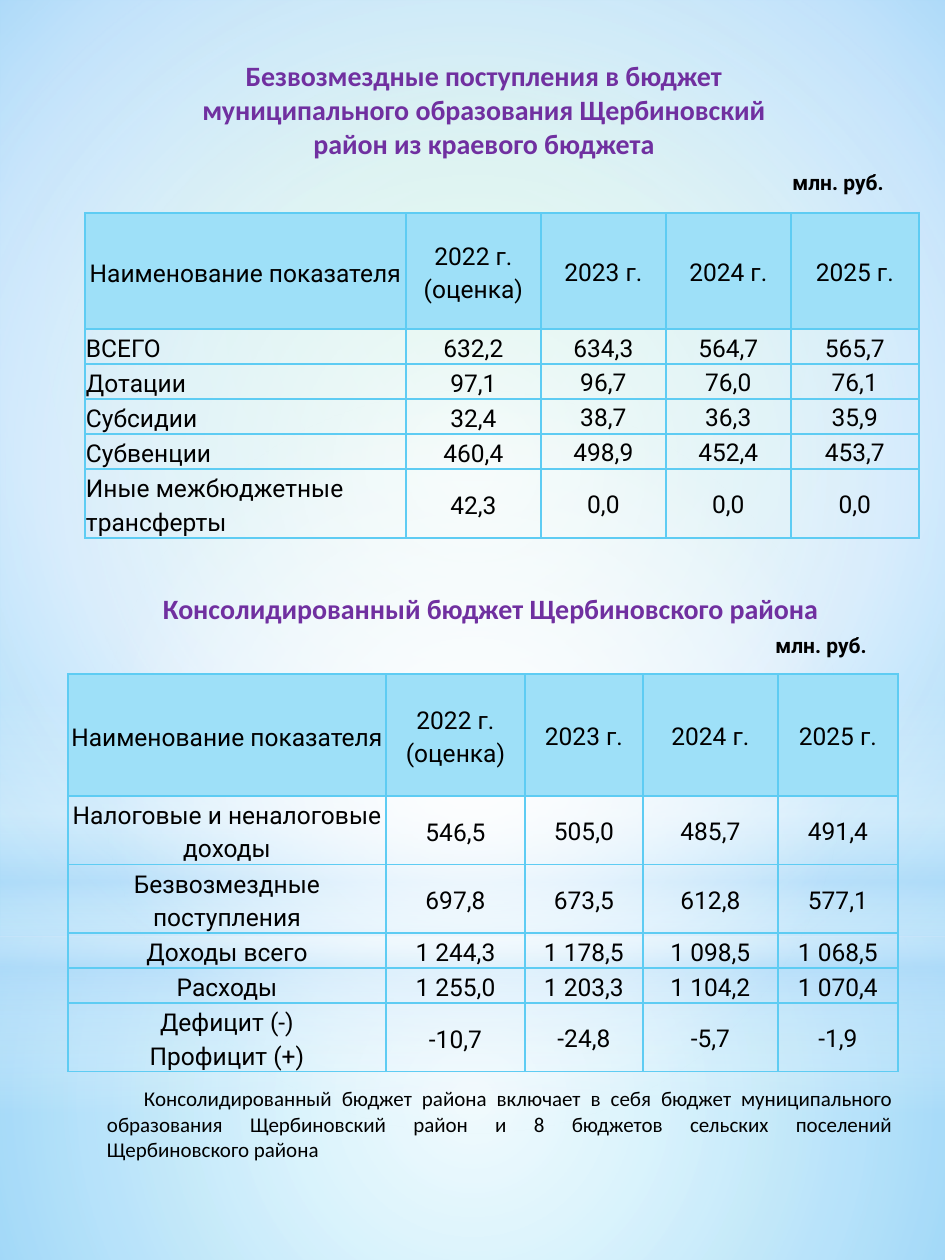
"""Builds the slide with two budget tables for the Shcherbinovsky district."""
from lxml import etree
from pptx import Presentation
from pptx import util as u
from pptx.dml.color import RGBColor
from pptx.enum import shapes, text
from pptx.oxml.ns import qn

PX = 914400 // 126
PURPLE, BLACK, BORDER, HEADER = "7030A0", "000000", "5ECCF3", "9EE0F8"
CENTER = text.PP_ALIGN.CENTER
COLUMNS = ["Наименование показателя", "2022 г. (оценка)", "2023 г.", "2024 г.", "2025 г."]

TRANSFERS = [
    COLUMNS,
    ["ВСЕГО", "632,2", "634,3", "564,7", "565,7"],
    ["Дотации", "97,1", "96,7", "76,0", "76,1"],
    ["Субсидии", "32,4", "38,7", "36,3", "35,9"],
    ["Субвенции", "460,4", "498,9", "452,4", "453,7"],
    ["Иные межбюджетные трансферты", "42,3", "0,0", "0,0", "0,0"],
]
CONSOLIDATED = [
    COLUMNS,
    ["Налоговые и неналоговые доходы", "546,5", "505,0", "485,7", "491,4"],
    ["Безвозмездные поступления", "697,8", "673,5", "612,8", "577,1"],
    ["Доходы всего", "1 244,3", "1 178,5", "1 098,5", "1 068,5"],
    ["Расходы", "1 255,0", "1 203,3", "1 104,2", "1 070,4"],
    ["Дефицит (-)\nПрофицит (+)", "-10,7", "-24,8", "-5,7", "-1,9"],
]


def px(*lengths):
    return [u.Emu(length * PX) for length in lengths]


def color(value):
    return RGBColor.from_string(value)


def add_child(parent, tag, **attributes):
    return etree.SubElement(parent, qn(tag), {key: str(value) for key, value in attributes.items()})


def apply_gradient(element, stops, focus=None):
    """Replace the solid fill by a gradient: circular around focus, else top to bottom."""
    solid = next(element.iter(qn("a:solidFill")))
    gradient = etree.Element(qn("a:gradFill"), rotWithShape="1")
    stop_list = add_child(gradient, "a:gsLst")
    for position, value, opacity in stops:
        stop = add_child(stop_list, "a:gs", pos=position * 1000)
        tint = add_child(stop, "a:srgbClr", val=value)
        if opacity < 100:
            add_child(tint, "a:alpha", val=opacity * 1000)
    if focus:
        circle = add_child(gradient, "a:path", path="circle")
        add_child(circle, "a:fillToRect", **{side: inset * 1000 for side, inset in zip("ltrb", focus)})
    else:
        add_child(gradient, "a:lin", ang=5400000, scaled=0)
    solid.getparent().replace(solid, gradient)


def add_glow(slide, kind, box, stops, focus=None):
    shape = slide.shapes.add_shape(kind, *px(*box))
    shape.shadow.inherit = False
    shape.line.fill.background()
    shape.fill.solid()
    apply_gradient(shape._element, stops, focus)


def add_backdrop(slide):
    slide.background.fill.solid()
    apply_gradient(slide._element, [(0, "9EE2CF", 100), (60, "B4DCFA", 100), (100, "5ECCF3", 100)],
                   (20, 10, 20, 60))
    rectangle, oval = shapes.MSO_SHAPE.RECTANGLE, shapes.MSO_SHAPE.OVAL
    middle = (50, 50, 50, 50)
    add_glow(slide, rectangle, (0, 937, 945, 323),
             [(0, "FFFFFF", 91), (37, "FFFFFF", 76), (100, "B4DCFA", 79)], middle)
    add_glow(slide, rectangle, (0, 0, 945, 937),
             [(0, "FFFFFF", 89), (48, "FFFFFF", 62), (100, "B4DCFA", 79)], middle)
    add_glow(slide, rectangle, (0, 692, 945, 420),
             [(0, "FFFFFF", 0), (29, "FFFFFF", 30), (45, "B4DCFA", 40),
              (55, "FFFFFF", 26), (65, "B4DCFA", 60), (100, "FFFFFF", 0)])
    add_glow(slide, oval, (0, 294, 945, 937), [(0, "FFFFFF", 100), (56, "FFFFFF", 0)], middle)


def write(frame, content, size=14, font="Roboto", ink=BLACK, bold=False,
          align=text.PP_ALIGN.LEFT, spacing=None, indent=0):
    frame.word_wrap = True
    frame.text = content
    for paragraph in frame.paragraphs:
        paragraph.alignment = align
        paragraph.line_spacing = spacing
        if indent:
            paragraph._p.get_or_add_pPr().set("indent", str(indent * PX))
        for run in paragraph.runs:
            run.font.size = u.Pt(size)
            run.font.name = font
            run.font.bold = bold
            run.font.color.rgb = color(ink)


def set_margins(target, left, top, right, bottom):
    target.margin_left, target.margin_top, target.margin_right, target.margin_bottom = px(
        left, top, right, bottom)


def add_text(slide, content, box, padded=False, **style):
    frame = slide.shapes.add_textbox(*px(*box)).text_frame
    if not padded:
        set_margins(frame, 0, 0, 0, 0)
    write(frame, content, **style)


def set_title(slide, content, box, **style):
    """Move the title above the backdrop and format it."""
    title = slide.shapes.title
    title._element.getparent().append(title._element)
    title.left, title.top, title.width, title.height = px(*box)
    frame = title.text_frame
    frame.auto_size = text.MSO_AUTO_SIZE.NONE
    frame.vertical_anchor = text.MSO_ANCHOR.TOP
    set_margins(frame, 0, 0, 0, 0)
    write(frame, content, **style)


def add_borders(cell):
    properties = cell._tc.get_or_add_tcPr()
    for side in "LRTB":
        line = add_child(properties, f"a:ln{side}", w=12700)
        add_child(add_child(line, "a:solidFill"), "a:srgbClr", val=BORDER)


def add_budget_table(slide, rows, left, top, widths, heights, label_align):
    frame = slide.shapes.add_table(len(rows), len(widths),
                                   *px(left, top, sum(widths), sum(heights)))
    table = frame.table
    table.first_row = table.horz_banding = False
    for column, width in zip(table.columns, px(*widths)):
        column.width = width
    for row, height in zip(table.rows, px(*heights)):
        row.height = height
    for i, values in enumerate(rows):
        for j, value in enumerate(values):
            cell = table.cell(i, j)
            inset = 1 if j < 2 else 0
            set_margins(cell, inset, inset, inset, 0)
            cell.vertical_anchor = text.MSO_ANCHOR.MIDDLE
            add_borders(cell)
            if i == 0:
                cell.fill.solid()
                cell.fill.fore_color.rgb = color(HEADER)
            else:
                cell.fill.background()
            align = label_align if i and j == 0 else CENTER
            write(cell.text_frame, value, align=align, spacing=1.15)


def main():
    presentation = Presentation()
    presentation.slide_width, presentation.slide_height = px(945, 1260)
    slide = presentation.slides.add_slide(presentation.slide_layouts[5])
    add_backdrop(slide)
    heading = dict(size=16, font="Calibri", ink=PURPLE, bold=True)
    set_title(slide, "Безвозмездные поступления в бюджет муниципального образования "
              "Щербиновский район из краевого бюджета", (200, 59, 568, 102), align=CENTER, **heading)
    add_text(slide, "Консолидированный бюджет Щербиновского района", (163, 592, 679, 34), **heading)
    add_text(slide, "Консолидированный бюджет района включает в себя бюджет муниципального "
             "образования Щербиновский район и 8 бюджетов сельских поселений\v"
             "Щербиновского района", (107, 1086, 786, 77),
             size=12, font="Calibri", align=text.PP_ALIGN.JUSTIFY, indent=37)
    for left, top, width in ((780, 163, 137), (763, 626, 129)):
        add_text(slide, "млн. руб.", (left, top, width, 38), padded=True, size=12, bold=True)
    add_budget_table(slide, TRANSFERS, 85, 213, [321, 135, 125, 125, 128],
                     [116] + [35] * 4 + [69], text.PP_ALIGN.LEFT)
    add_budget_table(slide, CONSOLIDATED, 68, 674, [318, 139, 118, 135, 120],
                     [122, 68, 68, 35, 35, 68], CENTER)
    presentation.save("out.pptx")


if __name__ == "__main__":
    main()
